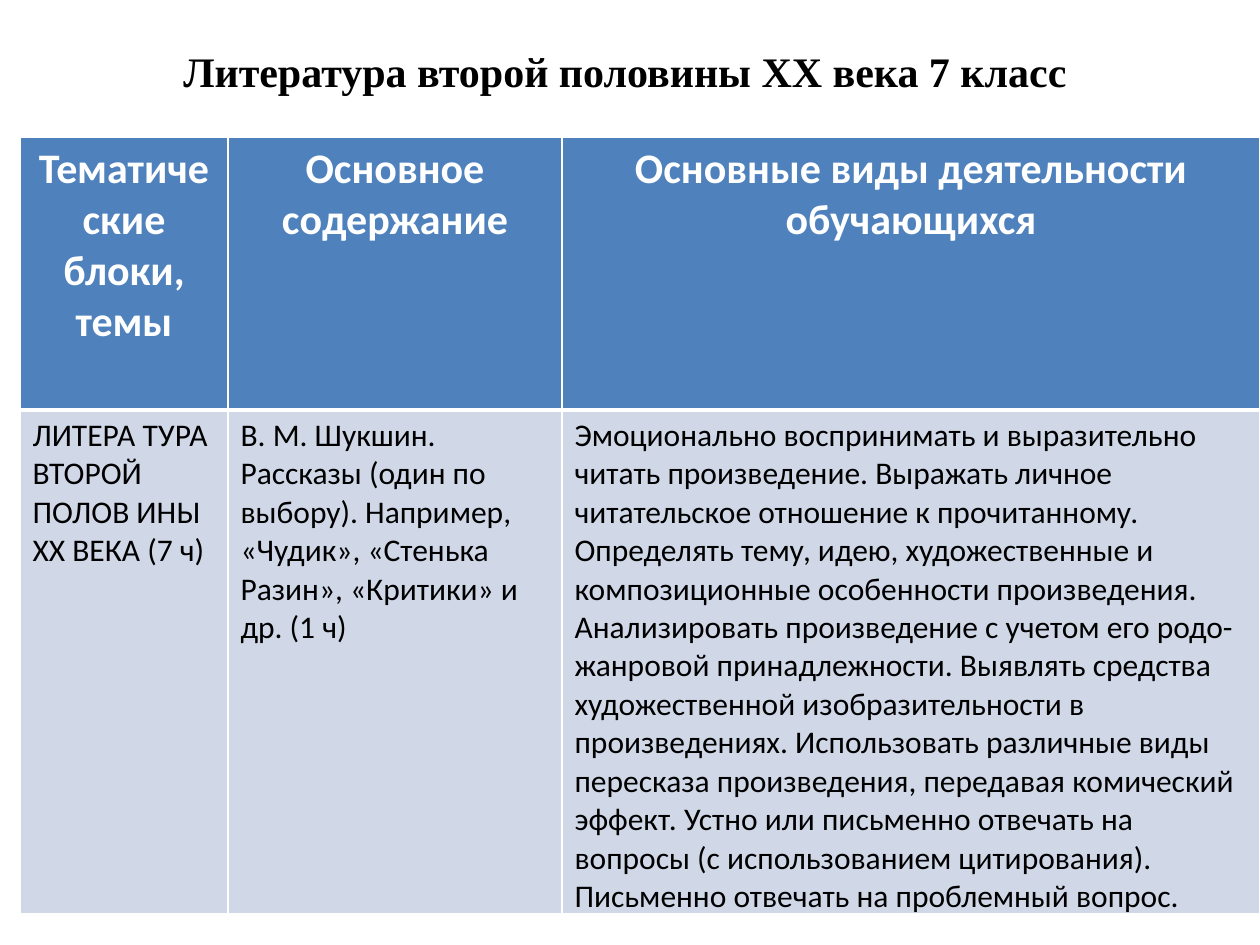
from pptx import Presentation
from pptx.dml.color import RGBColor as RGB
from pptx.enum.text import MSO_ANCHOR as ANCHOR, MSO_AUTO_SIZE as FIT, PP_ALIGN as ALIGN
from pptx.oxml import parse_xml
from pptx.oxml.ns import nsdecls
from pptx.util import Pt

THEME = {
    "title_font": "Times New Roman", "table_font": "Calibri",
    "black": "000000", "white": "FFFFFF",
    "header_fill": "4F81BD", "body_fill": "D0D8E8",
    "heading_size": 24, "body_size": 18,
}
SCALE = 914400 / 126  # EMU in one px


def px(*lengths):
    return [round(length * SCALE) for length in lengths]


def write(frame, text, *, font, size, color, bold=False, align=ALIGN.LEFT):
    paragraph = frame.paragraphs[0]
    paragraph.alignment = align
    run = paragraph.add_run()
    run.text = text
    run.font.name = font
    run.font.size = Pt(size)
    run.font.bold = bold
    run.font.color.rgb = RGB.from_string(color)


deck = Presentation()
deck.slide_width, deck.slide_height = px(1260, 945)
slide = deck.slides.add_slide(deck.slide_layouts[5])

# Title
title = slide.shapes.title
title.left, title.top, title.width, title.height = px(88, 39, 1074, 63)
title.text_frame.word_wrap = True
title.text_frame.auto_size = FIT.SHAPE_TO_FIT_TEXT
title.text_frame.vertical_anchor = ANCHOR.TOP
write(title.text_frame, "Литература второй половины XX века 7 класс",
      font=THEME["title_font"], size=THEME["heading_size"],
      color=THEME["black"], bold=True, align=ALIGN.CENTER)

# Curriculum table
headings = ["Тематические блоки, темы", "Основное содержание",
            "Основные виды деятельности обучающихся"]
lesson = [
    "ЛИТЕРА ТУРА ВТОРОЙ ПОЛОВ ИНЫ XX ВЕКА (7 ч)",
    "В. М. Шукшин. Рассказы (один по выбору). Например, «Чудик», "
    "«Стенька Разин», «Критики» и др. (1 ч)",
    "Эмоционально воспринимать и выразительно читать произведение. "
    "Выражать личное читательское отношение к прочитанному. "
    "Определять тему, идею, художественные и композиционные особенности произведения. "
    "Анализировать произведение с учетом его родо-жанровой принадлежности. "
    "Выявлять средства художественной изобразительности в произведениях. "
    "Использовать различные виды пересказа произведения, передавая комический эффект. "
    "Устно или письменно отвечать на вопросы (с использованием цитирования). "
    "Письменно отвечать на проблемный вопрос.",
]
header_format = dict(size=THEME["heading_size"], color=THEME["white"],
                     bold=True, align=ALIGN.CENTER)
body_format = dict(size=THEME["body_size"], color=THEME["black"])
bands = [(headings, THEME["header_fill"], header_format, 3),
         (lesson, THEME["body_fill"], body_format, 1)]

curriculum = slide.shapes.add_table(2, 3, *px(20, 137, 1240, 777)).table
for column, width in zip(curriculum.columns, px(208, 334, 698)):
    column.width = width
for row, height in zip(curriculum.rows, px(273, 504)):
    row.height = height

for row, (texts, fill, text_format, bottom_line) in zip(curriculum.rows, bands):
    for cell, text in zip(row.cells, texts):
        write(cell.text_frame, text, font=THEME["table_font"], **text_format)
        # White cell borders, with a heavier rule under the header
        top_line = 3 if texts is lesson else 1
        borders = {"lnL": 1, "lnR": 1, "lnT": top_line, "lnB": bottom_line}
        for side, weight in borders.items():
            cell._tc.get_or_add_tcPr().append(parse_xml(
                f'<a:{side} {nsdecls("a")} w="{Pt(weight)}"><a:solidFill>'
                f'<a:srgbClr val="{THEME["white"]}"/></a:solidFill></a:{side}>'))
        cell.fill.solid()
        cell.fill.fore_color.rgb = RGB.from_string(fill)
        if texts is lesson:
            cell.margin_bottom = 0

deck.save("out.pptx")
